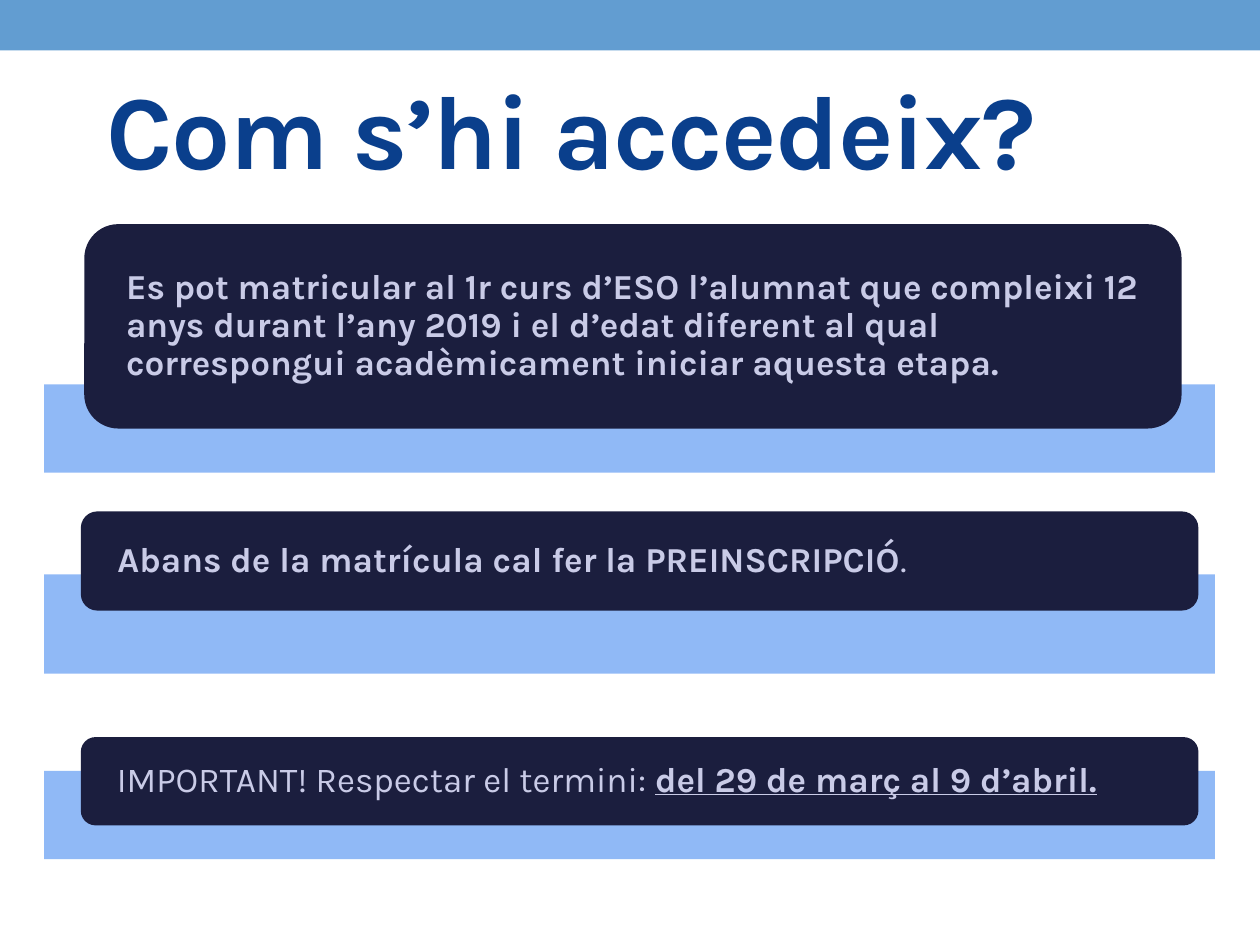
from lxml.etree import SubElement
from pptx import Presentation
from pptx.dml.color import RGBColor
from pptx.enum.shapes import MSO_SHAPE
from pptx.enum.text import MSO_ANCHOR, MSO_AUTO_SIZE, PP_ALIGN
from pptx.oxml.ns import qn
from pptx.util import Cm, Pt

# Content
TITLE = "Com s’hi accedeix?"
BOLD = {"bold": True}
# Each step: band (top, height), card (left, top, width, height) in cm, text runs
STEPS = [
    ((7.75, 1.78), (1.7, 4.52, 22.12, 4.12), [
        ("Es pot matricular al 1r curs d’ESO l’alumnat que compleixi 12 anys "
         "durant l’any 2019 i el d’edat diferent al qual correspongui "
         "acadèmicament iniciar aquesta etapa.", BOLD)]),
    ((11.58, 2), (1.63, 10.31, 22.53, 2), [
        ("Abans de la matrícula cal fer la PREINSCRIPCIÓ", BOLD),
        (".", {})]),
    ((15.54, 1.78), (1.63, 14.86, 22.53, 1.78), [
        ("IMPORTANT! Respectar el termini: ", {}),
        ("del 29 de març al 9 d’abril.", {"bold": True, "underline": True})]),
]

# Style
FONT = "Karla"
TOP_BLUE, TITLE_BLUE, BAND_BLUE = "629DD1", "0A3F8C", "85B2F6"
CARD_NAVY, CARD_TEXT = "1B1E3E", "C9CBE7"
BAND_LEFT, BAND_WIDTH = 0.89, 23.6


def color(hex_text):
    return RGBColor.from_string(hex_text)


def add_text(para, text, size=20, ink=CARD_TEXT, bold=False, underline=False):
    span = para.add_run()
    span.text = text
    font = span.font
    font.name, font.size = FONT, Pt(size)
    font.bold, font.underline = bold, underline
    font.color.rgb = color(ink)
    return span


def add_box(slide, kind, area, fill, opacity=100):
    box = slide.shapes.add_shape(kind, *(Cm(length) for length in area))
    box.shadow.inherit = False
    box.fill.solid()
    box.fill.fore_color.rgb = color(fill)
    box.line.fill.background()
    if opacity < 100:
        tint = box.fill._xPr.find(".//" + qn("a:srgbClr"))
        SubElement(tint, qn("a:alpha"), val=str(opacity * 1000))
    return box


def add_step(slide, band, card, runs):
    top, height = band
    add_box(slide, MSO_SHAPE.RECTANGLE, (BAND_LEFT, top, BAND_WIDTH, height),
            BAND_BLUE, opacity=90)
    frame = add_box(slide, MSO_SHAPE.ROUNDED_RECTANGLE, card, CARD_NAVY).text_frame
    frame.word_wrap = True
    frame.vertical_anchor = MSO_ANCHOR.MIDDLE
    frame.margin_left = frame.margin_right = Cm(0.64)
    frame.margin_top = frame.margin_bottom = 0
    para = frame.paragraphs[0]
    para.alignment = PP_ALIGN.LEFT
    para.line_spacing = 0.9
    for text, style in runs:
        add_text(para, text, **style)


def main():
    deck = Presentation()
    deck.slide_width, deck.slide_height = Cm(25.4), Cm(19.05)
    slide = deck.slides.add_slide(deck.slide_layouts[5])

    # Top strip
    add_box(slide, MSO_SHAPE.RECTANGLE, (0, 0, 25.4, 1.02), TOP_BLUE)

    # Title
    title = slide.shapes.title
    title.left, title.top = Cm(1.9), Cm(1.52)
    title.width, title.height = Cm(22.68), Cm(2.11)
    frame = title.text_frame
    frame.auto_size = MSO_AUTO_SIZE.NONE
    frame.vertical_anchor = MSO_ANCHOR.MIDDLE
    para = frame.paragraphs[0]
    para.alignment = PP_ALIGN.LEFT
    span = add_text(para, TITLE, size=60, ink=TITLE_BLUE, bold=True)
    span.font._element.set("spc", "-100")

    # Steps
    for band, card, runs in STEPS:
        add_step(slide, band, card, runs)

    deck.save("out.pptx")


if __name__ == "__main__":
    main()
